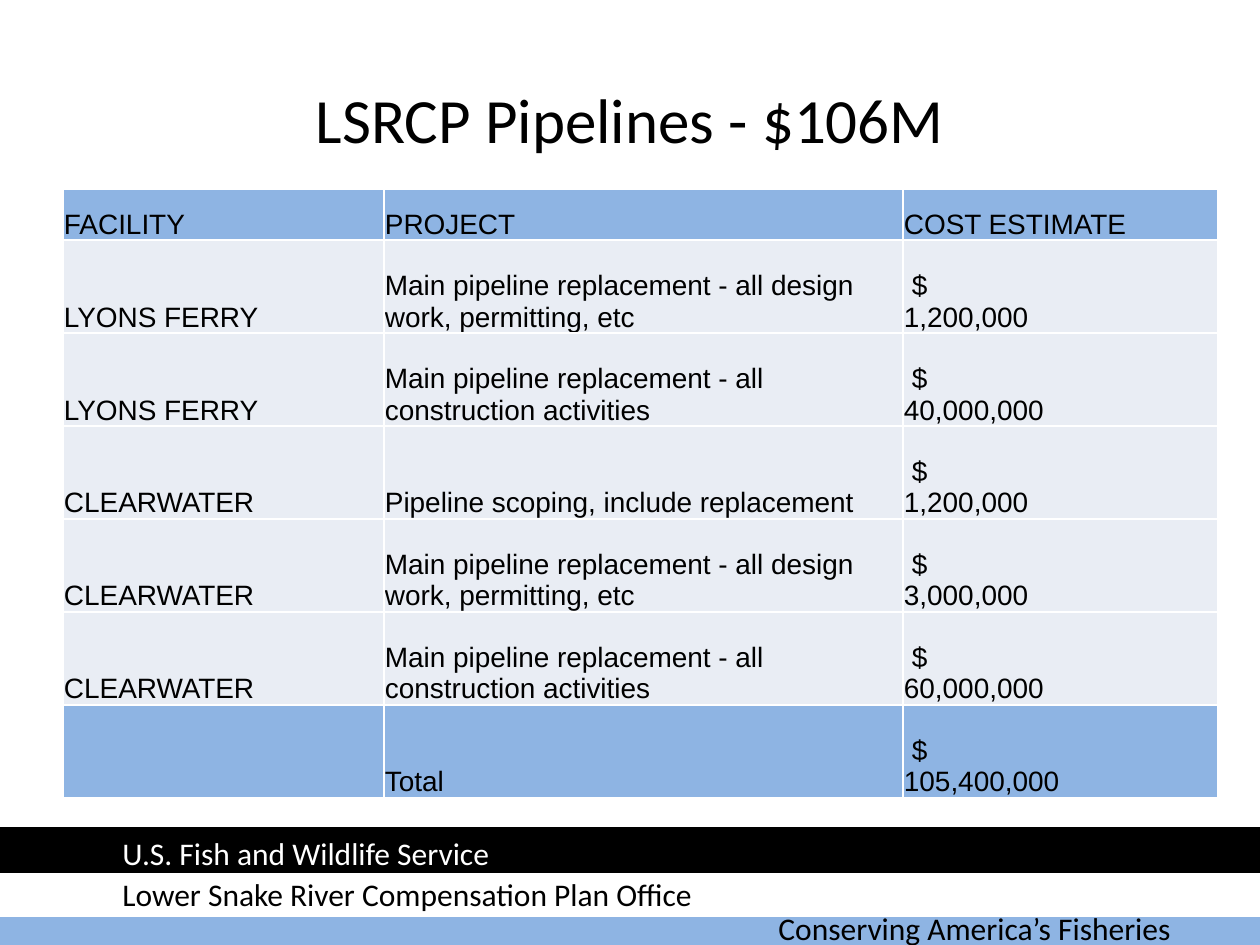
from lxml.etree import SubElement as Sub
from pptx import Presentation as Deck
from pptx.dml.color import RGBColor as Color
from pptx.enum.shapes import MSO_SHAPE as Shape
from pptx.enum.text import MSO_ANCHOR as Anchor, MSO_AUTO_SIZE as Fit, PP_ALIGN as Align
from pptx.oxml import parse_xml
from pptx.oxml.ns import nsdecls, qn
from pptx.util import Pt

SCALE = 914400 / 126  # EMU in one px
HUES = {"blue": "8EB4E3", "pale": "E9EDF4", "white": "FFFFFF", "black": "000000"}

# Footer bars: left, top, hue
BARS = [(-1, 903, "blue"), (0, 873, "white"), (0, 829, "black")]
# Footer labels: left, top, width, text, hue
LABELS = [
    (766, 903, 462, "Conserving America’s Fisheries", "black"),
    (110, 828, 524, "U.S. Fish and Wildlife Service", "white"),
    (110, 869, 626, "Lower Snake River Compensation Plan Office", "black"),
]
DESIGN = "Main pipeline replacement - all design work, permitting, etc"
BUILD = "Main pipeline replacement - all construction activities"
SCOPE = "Pipeline scoping, include replacement"
ROWS = [
    ("FACILITY", "PROJECT", "COST ESTIMATE"),
    ("LYONS FERRY", DESIGN, "$1,200,000"),
    ("LYONS FERRY", BUILD, "$40,000,000"),
    ("CLEARWATER", SCOPE, "$1,200,000"),
    ("CLEARWATER", DESIGN, "$3,000,000"),
    ("CLEARWATER", BUILD, "$60,000,000"),
    ("", "Total", "$105,400,000"),
]
WIDTHS = [321, 519, 315]
HEIGHTS = [51] + [93] * 6


def px(size):
    return round(size * SCALE)


def hue(name):
    return Color.from_string(HUES[name])


def add_run(para, text, size, face, tint="black"):
    run = para.add_run()
    run.text = text
    run.font.size = Pt(size)
    run.font.name = face
    run.font.color.rgb = hue(tint)


def add_bar(slide, left, top, tint):
    bar = slide.shapes.add_shape(Shape.RECTANGLE, px(left), px(top), px(1260), px(42))
    bar.shadow.inherit = False
    bar.fill.solid()
    bar.fill.fore_color.rgb = hue(tint)
    bar.line.color.rgb = hue(tint)
    bar.line.width = Pt(2)


def add_label(slide, left, top, width, text, tint):
    box = slide.shapes.add_textbox(px(left), px(top), px(width), px(50))
    frame = box.text_frame
    frame.word_wrap = True
    frame.auto_size = Fit.SHAPE_TO_FIT_TEXT
    add_run(frame.paragraphs[0], text, 18, "Calibri", tint)


def set_title(slide, text):
    title = slide.shapes.title
    title.left, title.top, title.width, title.height = map(px, (63, 63, 1134, 110))
    frame = title.text_frame
    frame.vertical_anchor = Anchor.MIDDLE
    para = frame.paragraphs[0]
    para.alignment = Align.CENTER
    add_run(para, text, 36, "Calibri")


def set_edges(cell):
    props = cell._tc.get_or_add_tcPr()
    for spot, side in enumerate("LRTB"):
        edge = parse_xml(f'<a:ln{side} {nsdecls("a")} w="{Pt(1)}"/>')
        fill = Sub(edge, qn("a:solidFill"))
        Sub(fill, qn("a:srgbClr"), val=HUES["white"])
        props.insert(spot, edge)


def fill_cell(cell, text, tint):
    cell.fill.solid()
    cell.fill.fore_color.rgb = hue(tint)
    set_edges(cell)
    cell.vertical_anchor = Anchor.BOTTOM
    cell.margin_left = cell.margin_right = cell.margin_top = px(1)
    cell.margin_bottom = 0
    if not text:
        return
    para = cell.text_frame.paragraphs[0]
    if text.startswith("$"):
        # The sign sits on its own line, set in a little
        para._p.get_or_add_pPr().set("indent", str(px(8)))
        add_run(para, "$", 16, "Arial")
        para.add_line_break()
        text = text[1:]
    add_run(para, text, 16, "Arial")


def add_costs(slide):
    area = map(px, (63, 189, sum(WIDTHS), sum(HEIGHTS)))
    table = slide.shapes.add_table(len(ROWS), len(WIDTHS), *area).table
    for col, width in zip(table.columns, WIDTHS):
        col.width = px(width)
    for r, (row, height) in enumerate(zip(ROWS, HEIGHTS)):
        table.rows[r].height = px(height)
        tint = "blue" if r in (0, len(ROWS) - 1) else "pale"
        for c, text in enumerate(row):
            fill_cell(table.cell(r, c), text, tint)


def main():
    deck = Deck()
    deck.slide_width, deck.slide_height = px(1260), px(945)
    slide = deck.slides.add_slide(deck.slide_layouts[5])
    # Footer
    for bar in BARS:
        add_bar(slide, *bar)
    for label in LABELS:
        add_label(slide, *label)
    # Title and table
    set_title(slide, "LSRCP Pipelines - $106M")
    add_costs(slide)
    deck.save("out.pptx")


if __name__ == "__main__":
    main()
